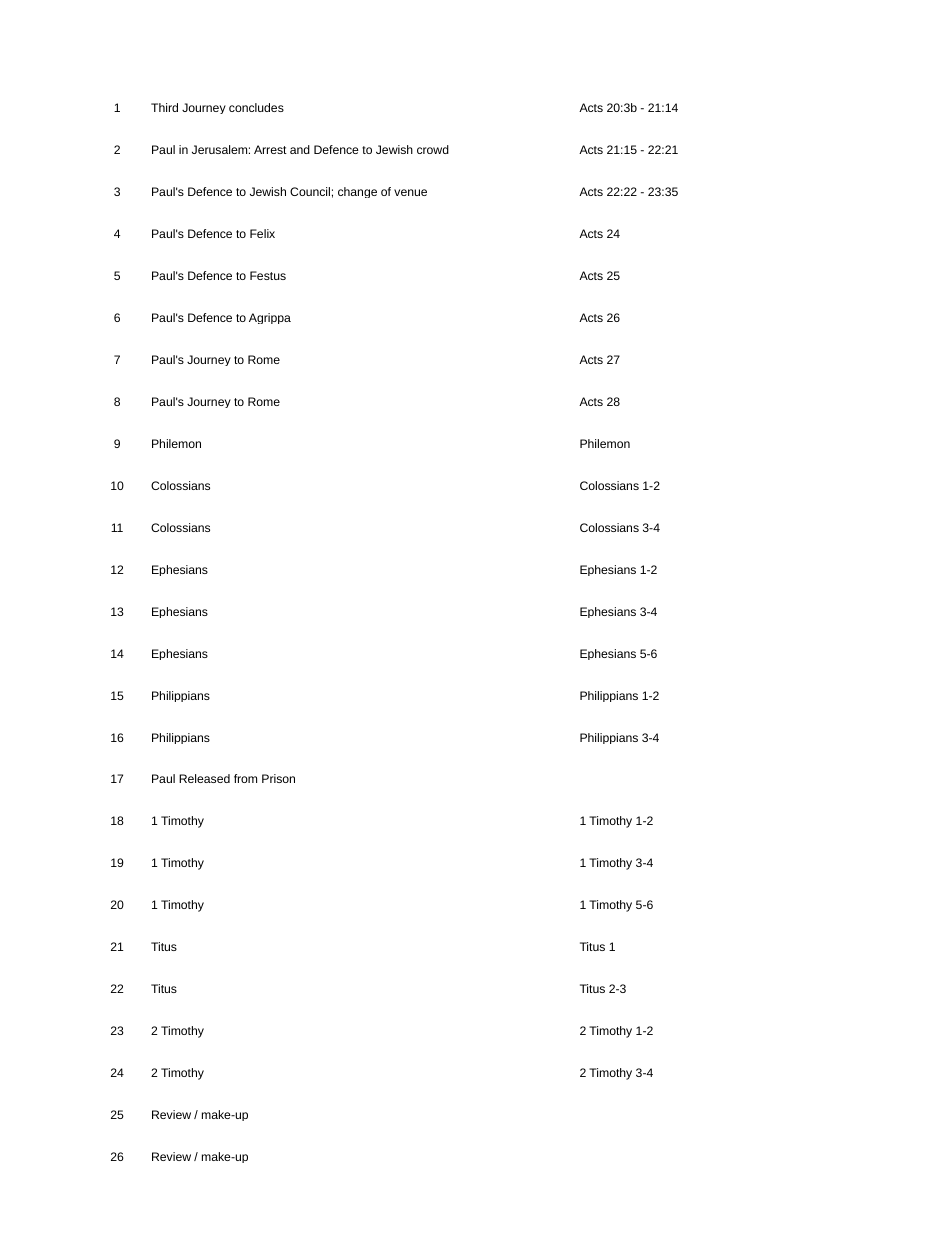
from typing import NamedTuple

from pptx import Presentation
from pptx import util as u
from pptx.dml import color
from pptx.enum import text

COLOURS = {"text": "000000"}
FONT, FONT_SIZE = "Arial", 7
SLIDE_WIDTH, SLIDE_HEIGHT = 7.5, 10
TABLE_LEFT, TABLE_TOP = 0.67, 0.58
COLUMN_WIDTHS = (0.52, 3.4, 2.41)
ROW_HEIGHT = SLIDE_HEIGHT / 30
INSET = 0.01


class Lesson(NamedTuple):
    title: str
    reading: str = ""


LESSONS = [
    Lesson("Third Journey concludes", "Acts 20:3b - 21:14"),
    Lesson("Paul in Jerusalem: Arrest and Defence to Jewish crowd", "Acts 21:15 - 22:21"),
    Lesson("Paul's Defence to Jewish Council; change of venue", "Acts 22:22 - 23:35"),
    Lesson("Paul's Defence to Felix", "Acts 24"),
    Lesson("Paul's Defence to Festus", "Acts 25"),
    Lesson("Paul's Defence to Agrippa", "Acts 26"),
    Lesson("Paul's Journey to Rome", "Acts 27"),
    Lesson("Paul's Journey to Rome", "Acts 28"),
    Lesson("Philemon", "Philemon"),
    Lesson("Colossians", "Colossians 1-2"),
    Lesson("Colossians", "Colossians 3-4"),
    Lesson("Ephesians", "Ephesians 1-2"),
    Lesson("Ephesians", "Ephesians 3-4"),
    Lesson("Ephesians", "Ephesians 5-6"),
    Lesson("Philippians", "Philippians 1-2"),
    Lesson("Philippians", "Philippians 3-4"),
    Lesson("Paul Released from Prison"),
    Lesson("1 Timothy", "1 Timothy 1-2"),
    Lesson("1 Timothy", "1 Timothy 3-4"),
    Lesson("1 Timothy", "1 Timothy 5-6"),
    Lesson("Titus", "Titus 1"),
    Lesson("Titus", "Titus 2-3"),
    Lesson("2 Timothy", "2 Timothy 1-2"),
    Lesson("2 Timothy", "2 Timothy 3-4"),
    Lesson("Review / make-up"),
    Lesson("Review / make-up"),
]


def fill_cell(cell, content: str, alignment: text.PP_ALIGN) -> None:
    cell.fill.background()
    cell.vertical_anchor = text.MSO_ANCHOR.BOTTOM
    cell.margin_left = cell.margin_right = cell.margin_top = u.Inches(INSET)
    cell.margin_bottom = 0
    if not content:
        return
    paragraph = cell.text_frame.paragraphs[0]
    paragraph.text = content
    paragraph.alignment = alignment
    font = paragraph.runs[0].font
    font.name, font.size = FONT, u.Pt(FONT_SIZE)
    font.color.rgb = color.RGBColor.from_string(COLOURS["text"])


def add_schedule(slide, lessons: list[Lesson]) -> None:
    table = slide.shapes.add_table(
        len(lessons), len(COLUMN_WIDTHS),
        u.Inches(TABLE_LEFT), u.Inches(TABLE_TOP),
        u.Inches(sum(COLUMN_WIDTHS)), u.Inches(ROW_HEIGHT * len(lessons)),
    ).table
    table.first_row = table.horz_banding = False
    for column, width in zip(table.columns, COLUMN_WIDTHS):
        column.width = u.Inches(width)
    for number, (row, lesson) in enumerate(zip(table.rows, lessons), start=1):
        row.height = u.Inches(ROW_HEIGHT)
        number_cell, title_cell, reading_cell = row.cells
        fill_cell(number_cell, str(number), text.PP_ALIGN.CENTER)
        fill_cell(title_cell, lesson.title, text.PP_ALIGN.LEFT)
        fill_cell(reading_cell, lesson.reading, text.PP_ALIGN.LEFT)


def main() -> None:
    presentation = Presentation()
    presentation.slide_width = u.Inches(SLIDE_WIDTH)
    presentation.slide_height = u.Inches(SLIDE_HEIGHT)
    slide = presentation.slides.add_slide(presentation.slide_layouts[6])
    add_schedule(slide, LESSONS)
    presentation.save("out.pptx")


if __name__ == "__main__":
    main()
